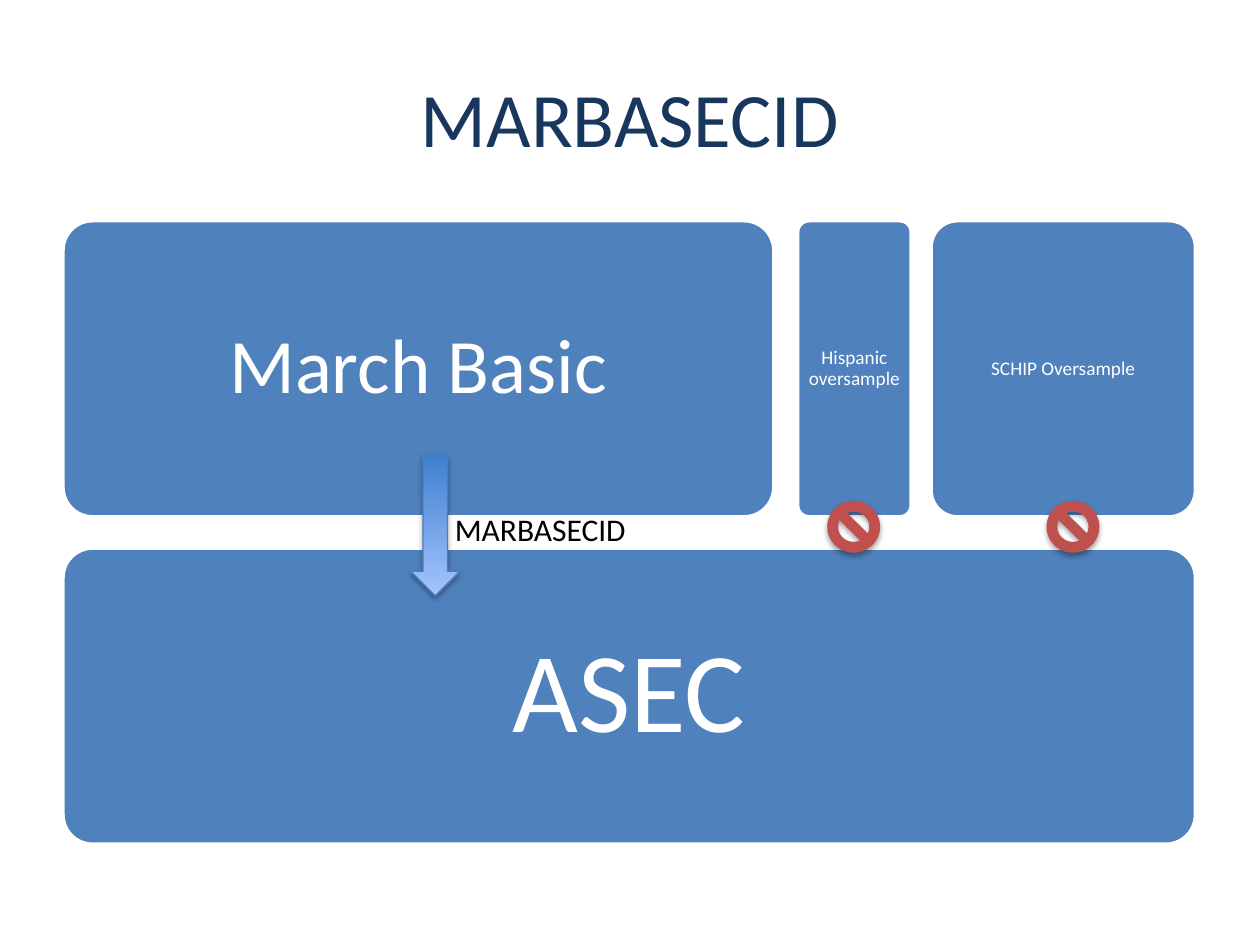
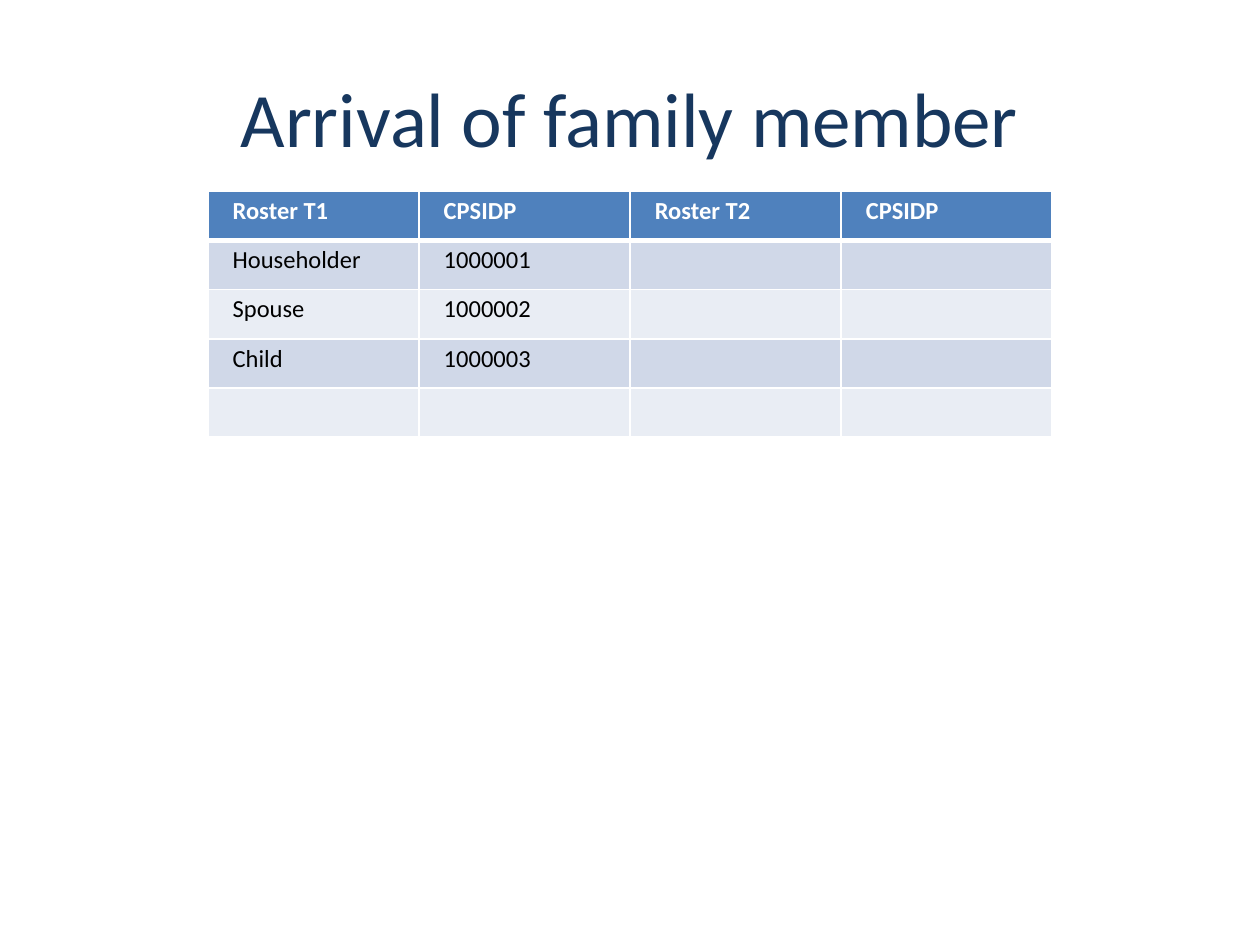
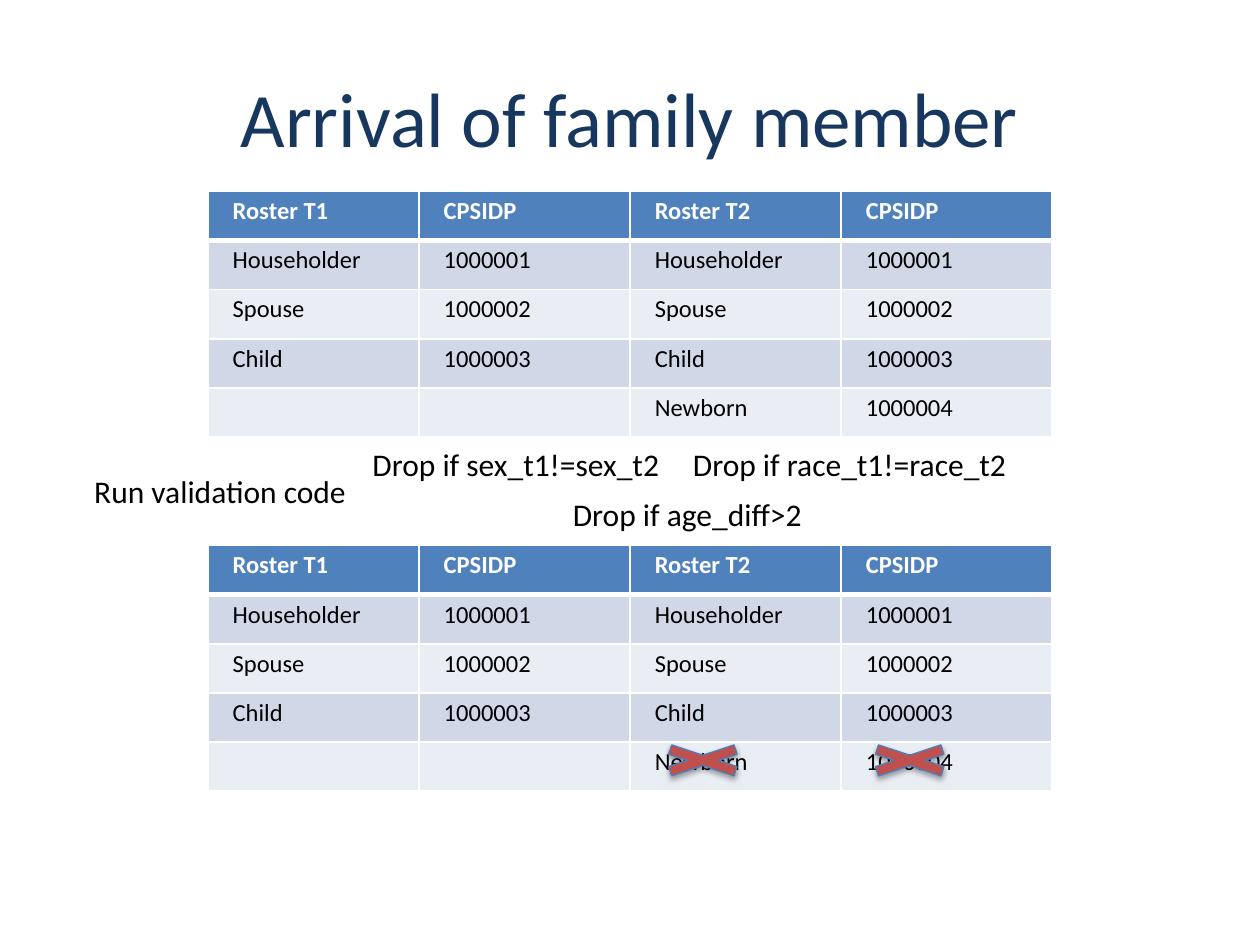
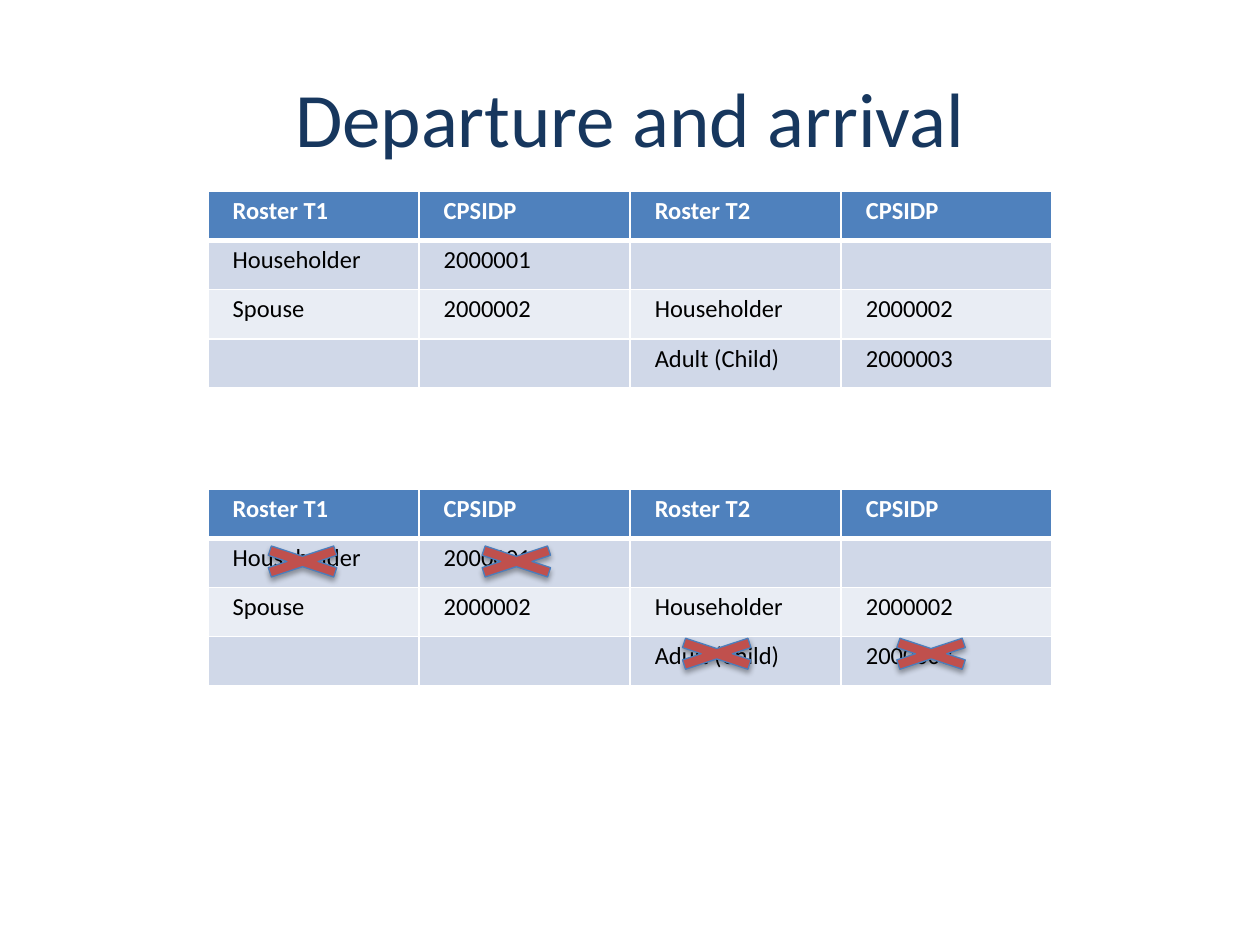
"""Build four slides on linking survey samples and household rosters."""
from lxml import etree
from pptx import Presentation
from pptx import util as u
from pptx.dml.color import RGBColor
from pptx.enum import shapes, text
from pptx.oxml import ns

FONT = "Calibri"
NAVY = RGBColor(0x17, 0x37, 0x5E)
BLUE = RGBColor(0x4F, 0x81, 0xBD)
OUTLINE_BLUE = RGBColor(0x4B, 0x7E, 0xBC)
ARROW_DARK = RGBColor(0x3F, 0x80, 0xCE)
ARROW_LIGHT = RGBColor(0xA4, 0xC4, 0xFF)
RED = RGBColor(0xC0, 0x50, 0x4D)
BAND_DARK = RGBColor(0xD0, 0xD8, 0xE8)
BAND_LIGHT = RGBColor(0xE9, 0xED, 0xF4)
WHITE = RGBColor(0xFF, 0xFF, 0xFF)
BLACK = RGBColor(0x00, 0x00, 0x00)

TITLE_BOX = (1.27, 0.76, 22.86, 3.18)
DIAGRAM_BOX = (1.27, 4.45, 22.83, 12.57)
ROSTER_LEFT, ROSTER_TOP, ROSTER_WIDTH, ROW_HEIGHT = 4.19, 3.86, 17.02, 0.99
HEADINGS = ("Roster T1", "CPSIDP", "Roster T2", "CPSIDP")


def cm(*lengths):
    """Turn numbers into centimetre lengths."""
    return [u.Cm(length) for length in lengths]


def write(paragraph, words, size, color, bold=False):
    """Add one styled run to a paragraph."""
    run = paragraph.add_run()
    run.text = words
    run.font.name = FONT
    run.font.size = u.Pt(size)
    run.font.bold = bold
    run.font.color.rgb = color


def add_title(slide, words):
    """Place the centred slide title."""
    frame = slide.shapes.add_textbox(*cm(*TITLE_BOX)).text_frame
    frame.word_wrap = True
    frame.vertical_anchor = text.MSO_ANCHOR.MIDDLE
    frame.paragraphs[0].alignment = text.PP_ALIGN.CENTER
    write(frame.paragraphs[0], words, 44, NAVY)


def add_label(slide, words, left, top, width):
    """Place a one-line label."""
    frame = slide.shapes.add_textbox(*cm(left, top, width, 1.02)).text_frame
    frame.word_wrap = True
    frame.auto_size = text.MSO_AUTO_SIZE.SHAPE_TO_FIT_TEXT
    write(frame.paragraphs[0], words, 18, BLACK)


def add_marker(slide, kind, box, line_color):
    """Draw a red symbol with a soft shadow below it."""
    marker = slide.shapes.add_shape(kind, *cm(*box))
    marker.fill.solid()
    marker.fill.fore_color.rgb = RED
    marker.line.color.rgb = line_color
    marker.line.width = u.Pt(0.75)
    marker.shadow.inherit = False
    effects = marker._element.spPr.find(ns.qn("a:effectLst"))
    shadow = etree.SubElement(effects, ns.qn("a:outerShdw"), blurRad="39370",
                              dist="22860", dir="5400000", rotWithShape="0")
    black = etree.SubElement(shadow, ns.qn("a:srgbClr"), val="000000")
    etree.SubElement(black, ns.qn("a:alpha"), val="35000")
    return marker


def add_sample(slide, words, box, size, margin):
    """Draw a rounded block that names a sample."""
    sample = slide.shapes.add_shape(shapes.MSO_SHAPE.ROUNDED_RECTANGLE, *cm(*box))
    sample.adjustments[0] = 0.1
    sample.shadow.inherit = False
    sample.fill.solid()
    sample.fill.fore_color.rgb = BLUE
    sample.line.color.rgb = WHITE
    sample.line.width = u.Pt(2)
    frame = sample.text_frame
    frame.word_wrap = True
    frame.vertical_anchor = text.MSO_ANCHOR.MIDDLE
    frame.margin_left = frame.margin_right = u.Cm(margin)
    frame.margin_top = frame.margin_bottom = u.Cm(margin)
    paragraph = frame.paragraphs[0]
    paragraph.alignment = text.PP_ALIGN.CENTER
    paragraph.line_spacing = 0.9
    write(paragraph, words, size, WHITE)


def add_sample_diagram(slide, box):
    """Show which samples are linked to the ASEC."""
    left, top, width, height = box
    block = 5.97
    add_sample(slide, "ASEC", (left, top + height - block, width, block), 65, 0.69)
    for words, offset, sample_width, size, margin in (
        ("March Basic", 0, 14.33, 44, 0.46),
        ("Hispanic oversample", 14.81, 2.29, 11, 0.13),
        ("SCHIP Oversample", 17.5, 5.33, 11, 0.13),
    ):
        add_sample(slide, words, (left + offset, top, sample_width, block), size, margin)

    arrow = add_marker(slide, shapes.MSO_SHAPE.UP_ARROW,
                       (left + 7.01, top + 4.72, 0.99, 2.84), OUTLINE_BLUE)
    arrow.rotation = 180
    arrow.fill.gradient()
    arrow.fill.gradient_angle = 90
    for stop, color in zip(arrow.fill.gradient_stops, (ARROW_DARK, ARROW_LIGHT)):
        stop.color.rgb = color

    for offset in (15.42, 19.84):
        add_marker(slide, shapes.MSO_SHAPE.NO_SYMBOL,
                   (left + offset, top + 5.66, 1.04, 1.02), RED)
    add_label(slide, "MARBASECID", left + 7.65, top + 5.71, 5.21)


def set_borders(cell, row):
    """Give a cell white borders, thick below the heading row."""
    widths = {"lnL": 1, "lnR": 1, "lnT": 3 if row == 1 else 1, "lnB": 3 if row == 0 else 1}
    properties = cell._tc.get_or_add_tcPr()
    for side, width in widths.items():
        line = etree.SubElement(properties, ns.qn(f"a:{side}"), w=str(u.Pt(width)))
        fill = etree.SubElement(line, ns.qn("a:solidFill"))
        etree.SubElement(fill, ns.qn("a:srgbClr"), val=str(WHITE))


def add_roster(slide, top, people, crosses=()):
    """Place a roster table, with crosses at offsets from its corner."""
    rows = (HEADINGS, *people)
    roster = slide.shapes.add_table(
        len(rows), len(HEADINGS),
        *cm(ROSTER_LEFT, top, ROSTER_WIDTH, ROW_HEIGHT * len(rows))).table
    for column in roster.columns:
        column.width = u.Cm(ROSTER_WIDTH / len(HEADINGS))
    for r, entries in enumerate(rows):
        roster.rows[r].height = u.Cm(ROW_HEIGHT)
        for c, words in enumerate(entries):
            cell = roster.cell(r, c)
            cell.margin_left = cell.margin_right = u.Cm(0.5)
            cell.margin_top = cell.margin_bottom = u.Cm(0.1)
            set_borders(cell, r)
            cell.fill.solid()
            band = BAND_DARK if r % 2 else BAND_LIGHT
            cell.fill.fore_color.rgb = band if r else BLUE
            if words:
                write(cell.text_frame.paragraphs[0], words, 14,
                      BLACK if r else WHITE, bold=r == 0)
    for x, y in crosses:
        add_marker(slide, shapes.MSO_SHAPE.MATH_MULTIPLY,
                   (ROSTER_LEFT + x, top + y, 2.54, 0.84), OUTLINE_BLUE)


def main():
    """Build and save the slides."""
    deck = Presentation()
    deck.slide_width, deck.slide_height = cm(25.4, 19.05)

    def new_slide(title):
        """Add a blank slide with a title."""
        slide = deck.slides.add_slide(deck.slide_layouts[6])
        add_title(slide, title)
        return slide

    add_sample_diagram(new_slide("MARBASECID"), DIAGRAM_BOX)

    family = (("Householder", "1000001"), ("Spouse", "1000002"), ("Child", "1000003"))
    nobody = ("", "")
    before = [person + nobody for person in family] + [nobody * 2]
    after = [person * 2 for person in family] + [nobody + ("Newborn", "1000004")]
    add_roster(new_slide("Arrival of family member"), ROSTER_TOP, before)

    arrival = new_slide("Arrival of family member")
    add_roster(arrival, ROSTER_TOP, after)
    add_roster(arrival, 11, after, [(8.71, 3.91), (12.88, 3.91)])
    for words, left, top, width in (
        ("Run validation code", 1.65, 9.4, 5.64),
        ("Drop if sex_t1!=sex_t2", 7.26, 8.84, 6.43),
        ("Drop if race_t1!=race_t2", 13.72, 8.84, 7.01),
        ("Drop if age_diff>2", 11.3, 9.86, 7.01),
    ):
        add_label(arrival, words, left, top, width)

    departure = new_slide("Departure and arrival")
    household = (
        ("Householder", "2000001") + nobody,
        ("Spouse", "2000002", "Householder", "2000002"),
        nobody + ("Adult (Child)", "2000003"),
    )
    add_roster(departure, ROSTER_TOP, household)
    add_roster(departure, 9.86, household,
               [(0.64, 1.04), (4.95, 1.04), (8.99, 2.9), (13.31, 2.9)])

    deck.save("out.pptx")


if __name__ == "__main__":
    main()
